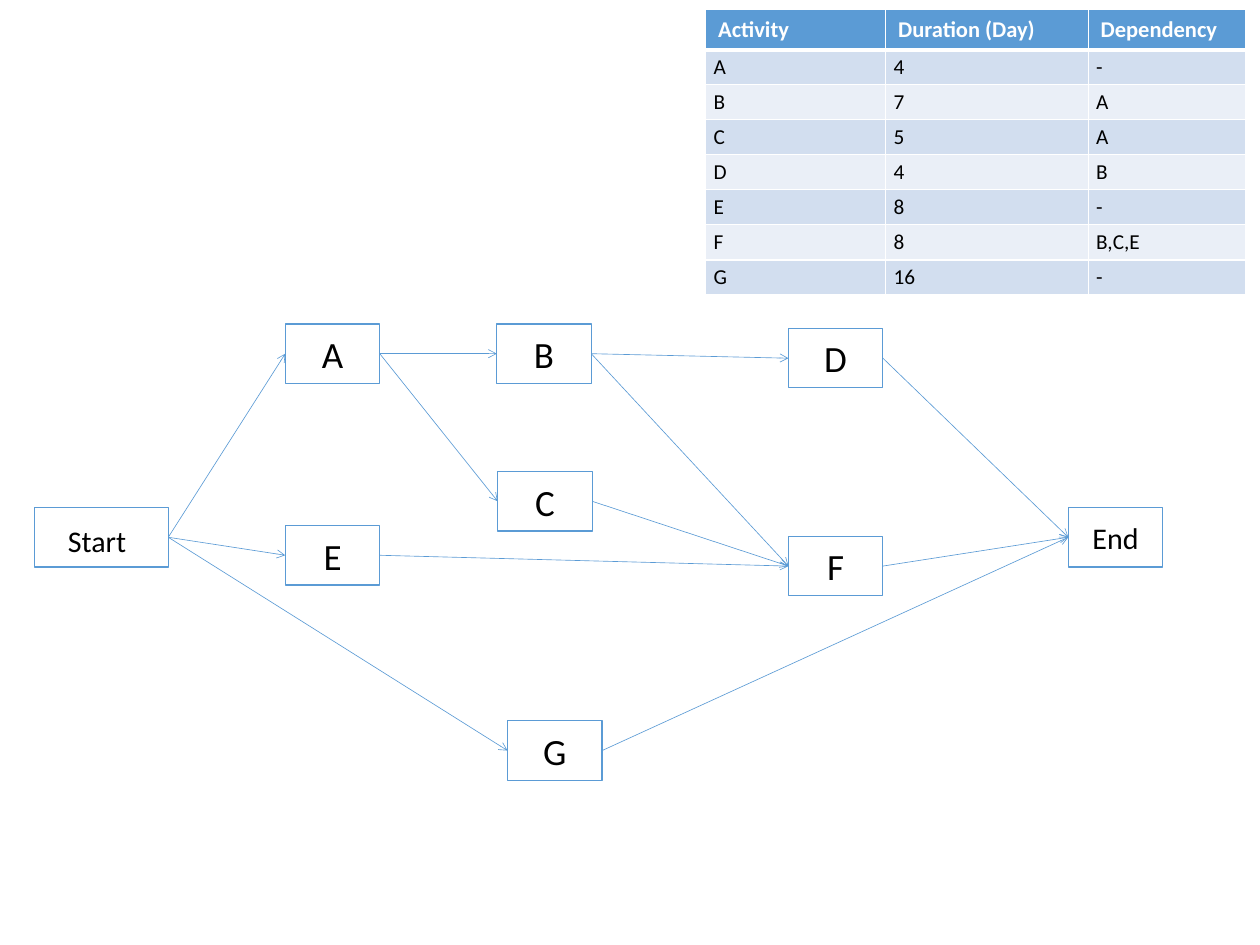
from lxml.etree import SubElement
from pptx import Presentation
from pptx.dml.color import RGBColor
from pptx.enum.shapes import MSO_CONNECTOR as Connector, MSO_SHAPE as Shape
from pptx.enum.text import MSO_ANCHOR as Anchor, PP_ALIGN as Align
from pptx.oxml.ns import qn
from pptx.util import Inches, Pt

BLUE = RGBColor(0x5B, 0x9B, 0xD5)
DARK_BAND = RGBColor(0xD2, 0xDE, 0xEF)
LIGHT_BAND = RGBColor(0xEA, 0xEF, 0xF7)
WHITE = RGBColor(0xFF, 0xFF, 0xFF)
BLACK = RGBColor(0x00, 0x00, 0x00)

FONT = "Calibri"
LETTER_SIZE, WORD_SIZE = 29.6, 24
BOX_WIDTH, BOX_HEIGHT = 1.05, 0.66
RIGHT, LEFT = 3, 1

# name: left, top
ACTIVITIES = {
    "A": (3.17, 3.6), "E": (3.17, 5.84), "G": (5.64, 8.01), "C": (5.53, 5.24),
    "B": (5.52, 3.6), "F": (8.76, 5.96), "D": (8.76, 3.65),
}
DEPENDENCIES = [
    ("Start", "A"), ("Start", "E"), ("Start", "G"), ("A", "B"), ("B", "D"), ("C", "F"),
    ("D", "End"), ("A", "C"), ("B", "F"), ("E", "F"), ("G", "End"), ("F", "End"),
]
SCHEDULE = [
    ("Activity", "Duration (Day)", "Dependency"),
    ("A", "4", "-"), ("B", "7", "A"), ("C", "5", "A"), ("D", "4", "B"),
    ("E", "8", "-"), ("F", "8", "B,C,E"), ("G", "16", "-"),
]
COLUMN_WIDTHS = (2, 2.25, 1.75)
ROW_HEIGHT = 0.37


class NetworkSlide:
    def __init__(self, page):
        self.shapes = page.shapes

    def style_span(self, span, size, color, bold=False):
        span.font.name = FONT
        span.font.size = Pt(size)
        span.font.bold = bold
        span.font.color.rgb = color

    def box(self, text, left, top, width=BOX_WIDTH, size=LETTER_SIZE):
        box = self.shapes.add_shape(
            Shape.RECTANGLE, Inches(left), Inches(top), Inches(width), Inches(BOX_HEIGHT))
        box.shadow.inherit = False
        box.fill.solid()
        box.fill.fore_color.rgb = WHITE
        box.line.color.rgb = BLUE
        box.line.width = Pt(1)
        frame = box.text_frame
        frame.text = text
        frame.vertical_anchor = Anchor.MIDDLE
        para = frame.paragraphs[0]
        para.alignment = Align.CENTER
        self.style_span(para.runs[0], size, BLACK)
        return box

    def arrow(self, source, target):
        """Join the right side of one box to the left side of another."""
        arrow = self.shapes.add_connector(Connector.STRAIGHT, 0, 0, 0, 0)
        arrow.begin_connect(source, RIGHT)
        arrow.end_connect(target, LEFT)
        arrow.line.color.rgb = BLUE
        arrow.line.width = Pt(0.5)
        SubElement(arrow.line._get_or_add_ln(), qn("a:tailEnd"), type="arrow")
        SubElement(arrow._element.spPr, qn("a:effectLst"))

    def cell_borders(self, cell, top, bottom):
        """Draw white borders; they must come before the fill in the cell's XML."""
        properties = cell._tc.get_or_add_tcPr()
        for side, width in (("L", 1), ("R", 1), ("T", top), ("B", bottom)):
            line = SubElement(properties, qn(f"a:ln{side}"), w=str(Pt(width)))
            fill = SubElement(line, qn("a:solidFill"))
            SubElement(fill, qn("a:srgbClr"), val=str(WHITE))

    def table(self, rows, left, top):
        frame = self.shapes.add_table(
            len(rows), len(COLUMN_WIDTHS), Inches(left), Inches(top),
            Inches(sum(COLUMN_WIDTHS)), Inches(ROW_HEIGHT * len(rows)))
        table = frame.table
        for column, width in zip(table.columns, COLUMN_WIDTHS):
            column.width = Inches(width)
        for index, values in enumerate(rows):
            table.rows[index].height = Inches(ROW_HEIGHT)
            header = index == 0
            band = BLUE if header else DARK_BAND if index % 2 else LIGHT_BAND
            side, edge = (0.14, 0.07) if header else (0.09, 0.05)
            for cell, value in zip(table.rows[index].cells, values):
                cell.text = value
                cell.margin_left = cell.margin_right = Inches(side)
                cell.margin_top = cell.margin_bottom = Inches(edge)
                self.cell_borders(cell, 3 if index == 1 else 1, 3 if header else 1)
                cell.fill.solid()
                cell.fill.fore_color.rgb = band
                self.style_span(cell.text_frame.paragraphs[0].runs[0],
                                18 if header else 17, WHITE if header else BLACK, header)


def main():
    deck = Presentation()
    deck.slide_width, deck.slide_height = Inches(14), Inches(10.5)
    network = NetworkSlide(deck.slides.add_slide(deck.slide_layouts[6]))

    boxes = {name: network.box(name, *place) for name, place in ACTIVITIES.items()}
    boxes["Start"] = network.box("Start", 0.38, 5.64, width=1.49, size=WORD_SIZE)
    space = boxes["Start"].text_frame.paragraphs[0].add_run()
    space.text = " "
    network.style_span(space, LETTER_SIZE, BLACK)
    boxes["End"] = network.box("End", 11.87, 5.64, size=WORD_SIZE)

    for source, target in DEPENDENCIES:
        network.arrow(boxes[source], boxes[target])
    network.table(SCHEDULE, 7.84, 0.11)
    deck.save("out.pptx")


if __name__ == "__main__":
    main()
